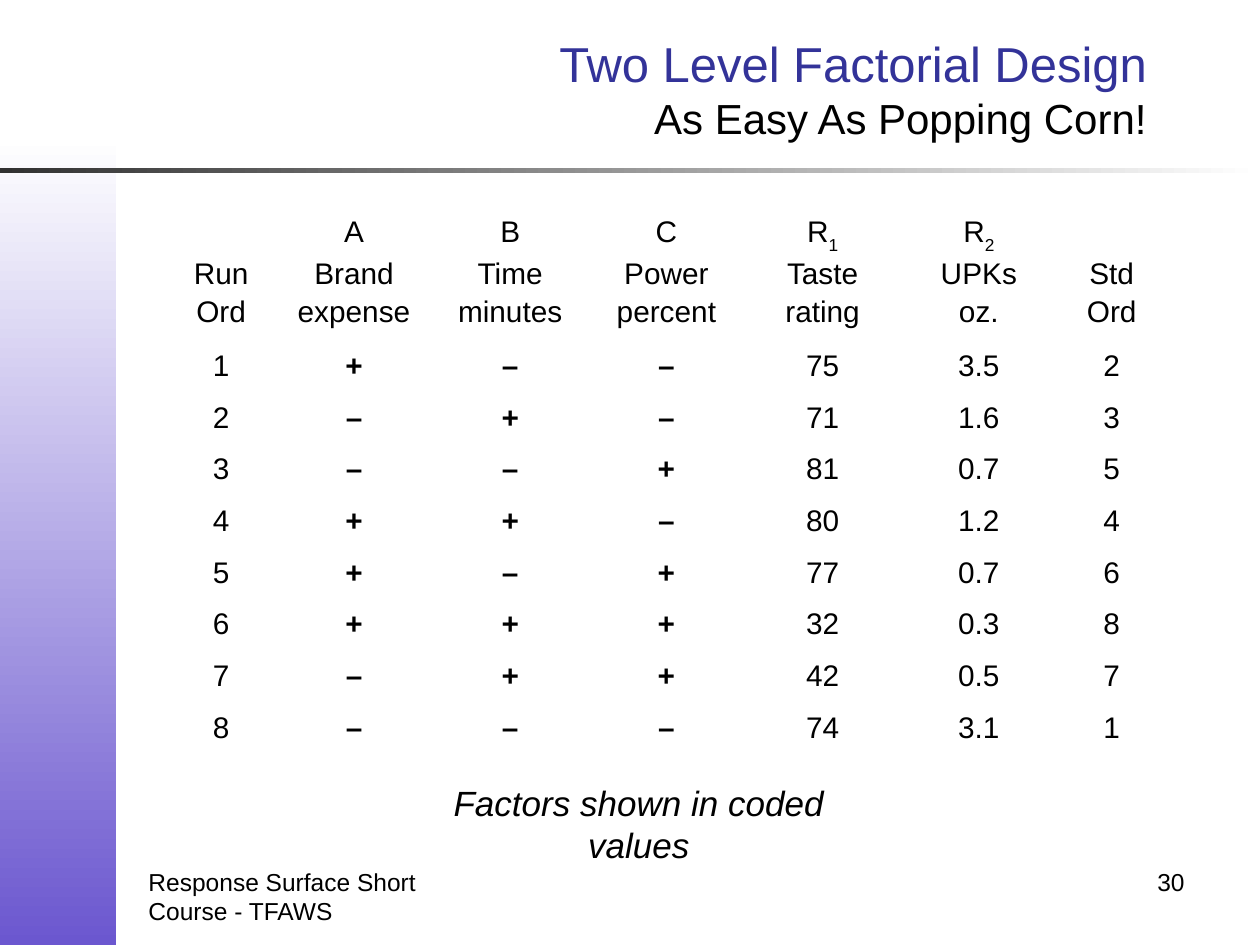
from dataclasses import dataclass

from pptx import Presentation
from pptx.dml.color import RGBColor
from pptx.enum.shapes import MSO_SHAPE
from pptx.enum.text import MSO_ANCHOR, PP_ALIGN
from pptx.util import Inches, Pt

BLACK = "000000"
COL_WIDTHS = [0.87] + [1.24] * 5 + [0.87]
HEADER_HEIGHTS = [0.3, 0.3, 0.38]
DATA_HEIGHT = 0.41
SUBSCRIPT = "-30000"

HEADERS = [
    ["", "A", "B", "C", "R_1", "R_2", ""],
    ["Run", "Brand", "Time", "Power", "Taste", "UPKs", "Std"],
    ["Ord", "expense", "minutes", "percent", "rating", "oz.", "Ord"],
]
RUNS = [
    ["1", "+", "–", "–", "75", "3.5", "2"],
    ["2", "–", "+", "–", "71", "1.6", "3"],
    ["3", "–", "–", "+", "81", "0.7", "5"],
    ["4", "+", "+", "–", "80", "1.2", "4"],
    ["5", "+", "–", "+", "77", "0.7", "6"],
    ["6", "+", "+", "+", "32", "0.3", "8"],
    ["7", "–", "+", "+", "42", "0.5", "7"],
    ["8", "–", "–", "–", "74", "3.1", "1"],
]


@dataclass
class Band:
    box: tuple
    start: str
    end: str
    angle: int


@dataclass
class Line:
    text: str
    size: int
    color: str = BLACK
    italic: bool = False


@dataclass
class Label:
    box: tuple
    lines: list
    align: PP_ALIGN
    anchor: MSO_ANCHOR = MSO_ANCHOR.TOP


BANDS = [
    Band((0, 1.08, 0.92, 6.42), "FFFFFF", "6B57CF", 270),
    Band((0, 1.33, 10, 0.04), "313131", "FFFFFF", 0),
]
LABELS = [
    Label((1.08, 6.83, 2.33, 0.52),
          [Line("Response Surface Short Course - TFAWS", 14)], PP_ALIGN.LEFT),
    Label((2, 0.1, 7.2, 1.2),
          [Line("Two Level Factorial Design", 28, "333399"),
           Line("As Easy As Popping Corn!", 24)],
          PP_ALIGN.RIGHT, MSO_ANCHOR.MIDDLE),
    Label((3.07, 6.32, 4, 0.43),
          [Line("Factors shown in coded values", 20, italic=True)],
          PP_ALIGN.CENTER, MSO_ANCHOR.MIDDLE),
    Label((7.17, 6.83, 2.33, 0.52), [Line("30", 14)], PP_ALIGN.RIGHT),
]


def rgb(value: str) -> RGBColor:
    return RGBColor.from_string(value)


def style_font(font, color: str = BLACK, **values) -> None:
    for name, value in {"name": "Arial", **values}.items():
        setattr(font, name, value)
    font.color.rgb = rgb(color)


def add_band(s, band: Band) -> None:
    sp = s.shapes.add_shape(MSO_SHAPE.RECTANGLE, *map(Inches, band.box))
    sp.shadow.inherit = False
    sp.line.fill.background()
    sp.fill.gradient()
    sp.fill.gradient_angle = band.angle
    for stop, color in zip(sp.fill.gradient_stops, (band.start, band.end)):
        stop.color.rgb = rgb(color)


def add_label(s, label: Label) -> None:
    tf = s.shapes.add_textbox(*map(Inches, label.box)).text_frame
    tf.word_wrap = True
    tf.vertical_anchor = label.anchor
    p = tf.paragraphs[0]
    p.alignment = label.align
    for i, line in enumerate(label.lines):
        if i:
            p.add_line_break()
        r = p.add_run()
        r.text = line.text
        style_font(r.font, line.color, size=Pt(line.size), italic=line.italic)


def fill_cell(cell, text: str, is_header: bool) -> None:
    cell.fill.background()
    if is_header:
        cell.margin_top = cell.margin_bottom = 0
    p = cell.text_frame.paragraphs[0]
    p.alignment = PP_ALIGN.CENTER
    p.font.size = Pt(17)
    base, _, index = text.partition("_")
    for part in filter(None, (base, index)):
        r = p.add_run()
        r.text = part
        style_font(r.font, size=Pt(17), bold=part in ("+", "–"))
    if index:
        r._r.get_or_add_rPr().set("baseline", SUBSCRIPT)


def add_design_table(s) -> None:
    rows = HEADERS + RUNS
    heights = HEADER_HEIGHTS + [DATA_HEIGHT] * len(RUNS)
    table = s.shapes.add_table(
        len(rows), len(COL_WIDTHS), Inches(1.32), Inches(1.71),
        Inches(sum(COL_WIDTHS)), Inches(sum(heights))).table
    table.first_row = table.horz_banding = False
    for col, width in zip(table.columns, COL_WIDTHS):
        col.width = Inches(width)
    for i, (row, height) in enumerate(zip(table.rows, heights)):
        row.height = Inches(height)
        for cell, text in zip(row.cells, rows[i]):
            fill_cell(cell, text, i < len(HEADERS))


def main() -> None:
    prs = Presentation()
    prs.slide_width, prs.slide_height = Inches(10), Inches(7.5)
    s = prs.slides.add_slide(prs.slide_layouts[6])

    # Side panel and rule under the title
    for band in BANDS:
        add_band(s, band)

    # Title, caption and footer
    for label in LABELS:
        add_label(s, label)

    # Factorial design with responses
    add_design_table(s)

    prs.save("out.pptx")


if __name__ == "__main__":
    main()
